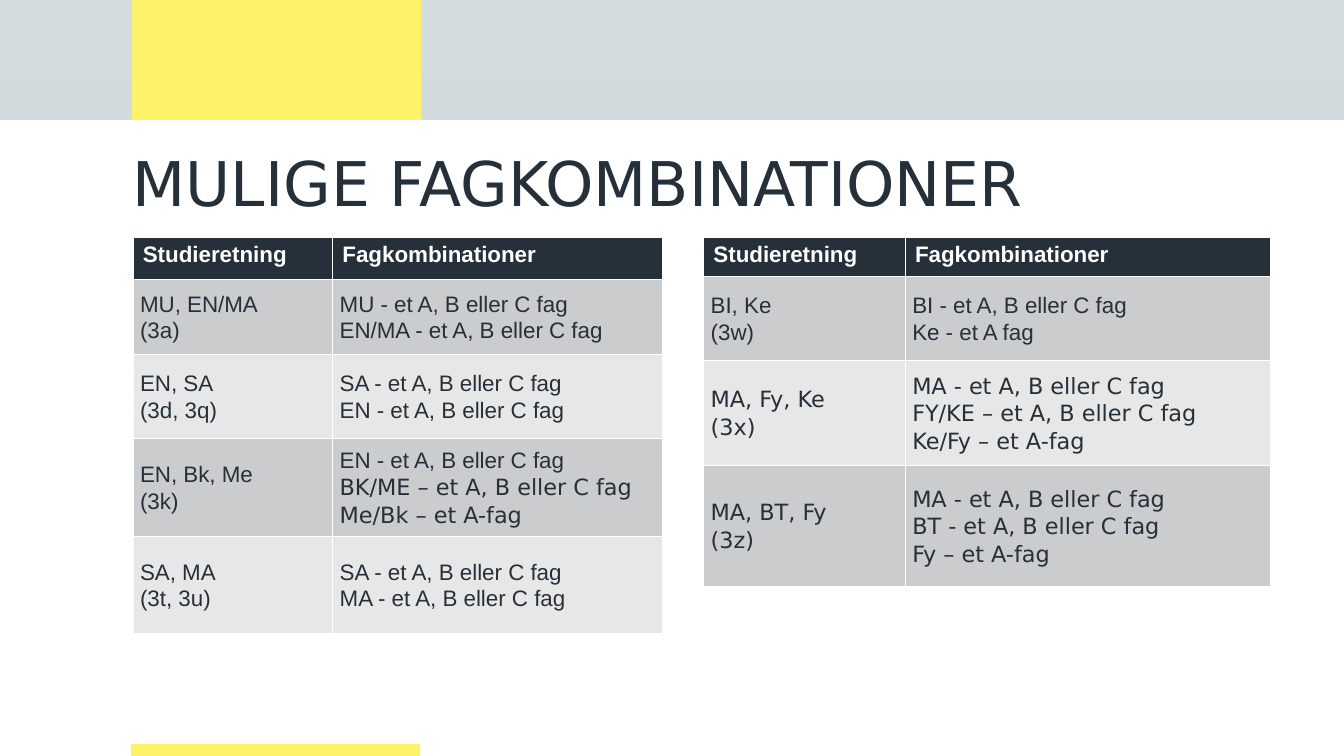
import copy

import pptx
import pptx.dml.color
import pptx.enum.shapes
import pptx.enum.text
import pptx.oxml.ns
import pptx.util

Cm, Pt = pptx.util.Cm, pptx.util.Pt
qn = pptx.oxml.ns.qn
ANCHOR = pptx.enum.text.MSO_ANCHOR
DARK, WHITE, YELLOW = "25303B", "FFFFFF", "FFF26B"
BANDS = ["CBCCCD", "E7E7E7"]
SANS, WIDE = "Arial", "DejaVu Sans"


def rgb(hex_string):
    return pptx.dml.color.RGBColor.from_string(hex_string)


def style_run(r, font, size, color, bold=False):
    for name, value in {"name": font, "size": Pt(size), "bold": bold}.items():
        setattr(r.font, name, value)
    r.font.color.rgb = rgb(color)


prs = pptx.Presentation()
prs.slide_width, prs.slide_height = Cm(33.87), Cm(19.05)
s = prs.slides.add_slide(prs.slide_layouts[6])

# Grey gradient background with three stops
fill = s.background.fill
fill.gradient()
fill.gradient_angle = 270
stop_list = next(s._element.iter(qn("a:gsLst")))
stop_list.append(copy.deepcopy(stop_list[-1]))
for stop, position, color in zip(fill.gradient_stops, (0, 0.5, 1),
                                 ("D5DCE0", "CDD3D7", "A9AEB1")):
    stop.position = position
    stop.color.rgb = rgb(color)

# Yellow column, white page over it, yellow strip at the bottom
for left, top, width, height, color in [
    (3.33, 0, 7.29, 19.05, YELLOW),
    (0, 3.02, 33.87, 16.03, WHITE),
    (3.3, 18.75, 7.29, 0.3, YELLOW),
]:
    sp = s.shapes.add_shape(pptx.enum.shapes.MSO_SHAPE.RECTANGLE,
                            Cm(left), Cm(top), Cm(width), Cm(height))
    sp.shadow.inherit = False
    sp.fill.solid()
    sp.fill.fore_color.rgb = rgb(color)
    sp.line.fill.background()

# Title
tf = s.shapes.add_textbox(Cm(3.35), Cm(3.33), Cm(27.2), Cm(2.18)).text_frame
for name, value in {"word_wrap": True, "vertical_anchor": ANCHOR.BOTTOM,
                    "margin_left": 0, "margin_right": 0,
                    "margin_top": 0, "margin_bottom": 0}.items():
    setattr(tf, name, value)
p = tf.paragraphs[0]
p.line_spacing = 0.85
r = p.add_run()
r.text = "MULIGE FAGKOMBINATIONER"
style_run(r, WIDE, 44, DARK)

# Tables: left, column widths, header height, rows (height, font, study line, combinations)
tables = [
    (3.35, (5.03, 8.33), 1.07, [
        (1.9, SANS, ["MU, EN/MA", "(3a)"],
         ["MU - et A, B eller C fag", "EN/MA - et A, B eller C fag"]),
        (2.11, SANS, ["EN, SA", "(3d, 3q)"],
         ["SA - et A, B eller C fag", "EN - et A, B eller C fag"]),
        (2.46, SANS, ["EN, Bk, Me", "(3k)"],
         ["EN - et A, B eller C fag", "BK/ME – et A, B eller C fag", "Me/Bk – et A-fag"]),
        (2.46, SANS, ["SA, MA", "(3t, 3u)"],
         ["SA - et A, B eller C fag", "MA - et A, B eller C fag"]),
    ]),
    (17.73, (5.08, 9.22), 0.99, [
        (2.13, SANS, ["BI, Ke", "(3w)"],
         ["BI - et A, B eller C fag", "Ke - et A fag"]),
        (2.64, WIDE, ["MA, Fy, Ke", "(3x)"],
         ["MA - et A, B eller C fag", "FY/KE – et A, B eller C fag", "Ke/Fy – et A-fag"]),
        (3.05, WIDE, ["MA, BT, Fy", "(3z)"],
         ["MA - et A, B eller C fag", "BT - et A, B eller C fag", "Fy – et A-fag"]),
    ]),
]

for left, widths, header_height, body in tables:
    rows = [(header_height, SANS, ["Studieretning"], ["Fagkombinationer"])] + body
    table = s.shapes.add_table(len(rows), 2, Cm(left), Cm(5.97), Cm(sum(widths)),
                               Cm(sum(row[0] for row in rows))).table
    for column, width in zip(table.columns, widths):
        column.width = Cm(width)
    for i, (height, font, *texts) in enumerate(rows):
        header = i == 0
        table.rows[i].height = Cm(height)
        side, edge = (0.25, 0.13) if header else (0.18, 0)
        for j, lines in enumerate(texts):
            cell = table.cell(i, j)
            cell.fill.solid()
            cell.fill.fore_color.rgb = rgb(DARK if header else BANDS[(i - 1) % 2])
            for name, value in {
                "margin_left": Cm(side), "margin_right": Cm(side),
                "margin_top": Cm(edge), "margin_bottom": Cm(edge),
                "vertical_anchor": ANCHOR.TOP if header else ANCHOR.MIDDLE,
            }.items():
                setattr(cell, name, value)
            tf = cell.text_frame
            p = tf.paragraphs[0]
            for n, line in enumerate(lines):
                # The study line breaks inside one paragraph
                if n and j == 0:
                    p.add_line_break()
                    p._p[-1].append(copy.deepcopy(p.runs[0]._r.get_or_add_rPr()))
                elif n:
                    p = tf.add_paragraph()
                if not header:
                    p.line_spacing = 1.07
                r = p.add_run()
                r.text = line
                style_run(r, WIDE if "–" in line else font, 16,
                          WHITE if header else DARK, header)

prs.save("out.pptx")
